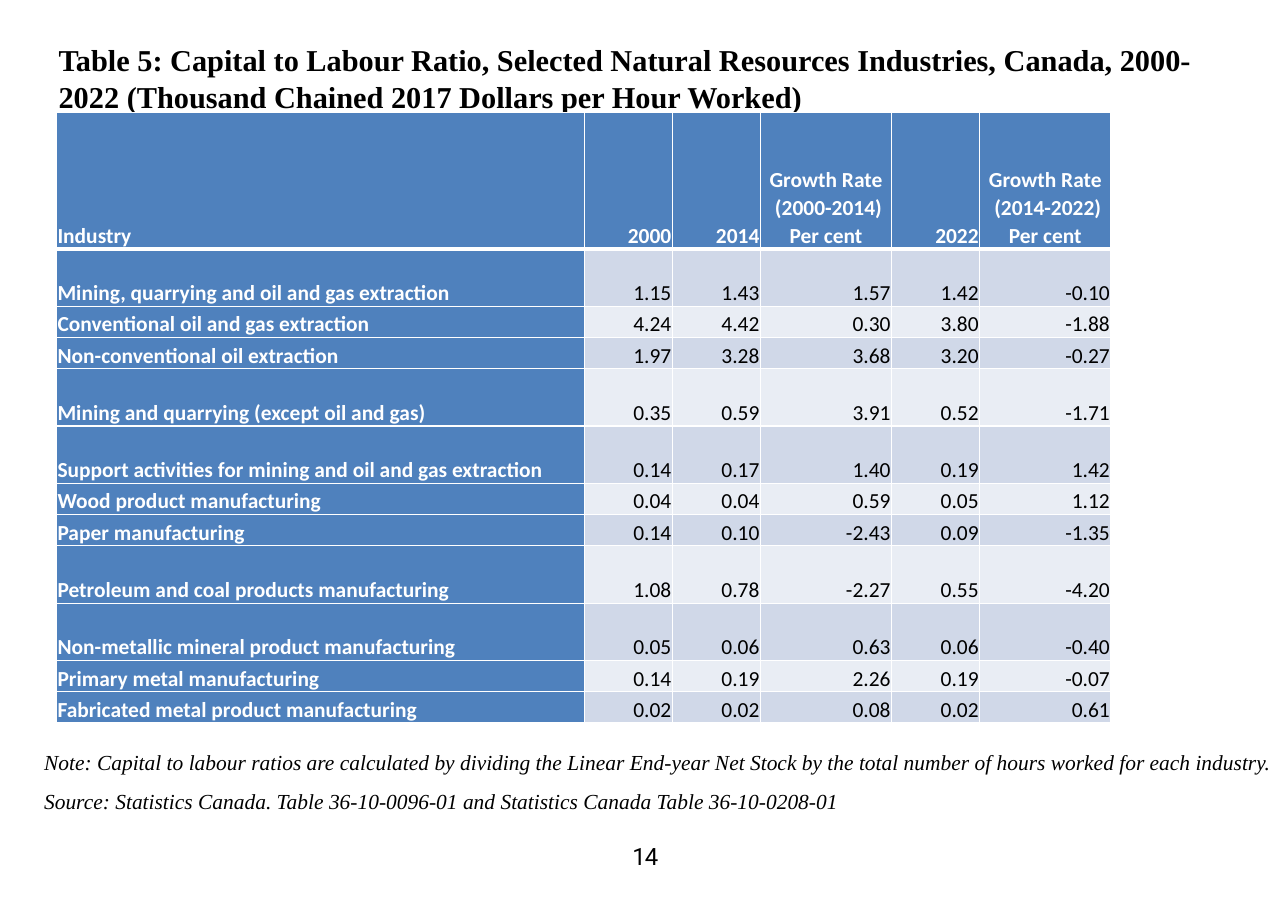
from lxml.etree import SubElement
from pptx import Presentation
from pptx.dml.color import RGBColor
from pptx.enum.text import MSO_ANCHOR as Anchor, MSO_AUTO_SIZE as AutoSize, PP_ALIGN as Align
from pptx.oxml.ns import qn
from pptx.util import Pt

BLACK, WHITE, HEADER_BLUE = "000000", "FFFFFF", "4F81BD"
BANDS = ("D0D8E8", "E9EDF4")

TITLE = ("Table 5: Capital to Labour Ratio, Selected Natural Resources Industries, Canada, "
         "2000-2022 (Thousand Chained 2017 Dollars per Hour Worked)")
NOTES = (
    "Note: Capital to labour ratios are calculated by dividing the Linear End-year Net Stock "
    "by the total number of hours worked for each industry.",
    "Source: Statistics Canada. Table 36-10-0096-01\u00a0and Statistics Canada Table 36-10-0208-01",
)
HEADINGS = ("Industry", "2000", "2014", "Growth Rate\n (2000-2014)\nPer cent",
            "2022", "Growth Rate\n (2014-2022)\nPer cent")
INDUSTRIES = (
    ("Mining, quarrying and oil and gas extraction", "1.15", "1.43", "1.57", "1.42", "-0.10"),
    ("Conventional oil and gas extraction", "4.24", "4.42", "0.30", "3.80", "-1.88"),
    ("Non-conventional oil extraction", "1.97", "3.28", "3.68", "3.20", "-0.27"),
    ("Mining and quarrying (except oil and gas)", "0.35", "0.59", "3.91", "0.52", "-1.71"),
    ("Support activities for mining and oil and gas extraction",
     "0.14", "0.17", "1.40", "0.19", "1.42"),
    ("Wood product manufacturing", "0.04", "0.04", "0.59", "0.05", "1.12"),
    ("Paper manufacturing", "0.14", "0.10", "-2.43", "0.09", "-1.35"),
    ("Petroleum and coal products manufacturing", "1.08", "0.78", "-2.27", "0.55", "-4.20"),
    ("Non-metallic mineral product manufacturing", "0.05", "0.06", "0.63", "0.06", "-0.40"),
    ("Primary metal manufacturing", "0.14", "0.19", "2.26", "0.19", "-0.07"),
    ("Fabricated metal product manufacturing", "0.02", "0.02", "0.08", "0.02", "0.61"),
)
COLUMN_WIDTHS = (344.9, 57.6, 57.6, 85.7, 57.6, 85.7)
HEADER_HEIGHT, ONE_LINE, TWO_LINES = 89.2, 20.35, 37.55
LONGEST_ONE_LINE_LABEL = 40


def rgb(color):
    return RGBColor.from_string(color)


def add_run(paragraph, text, size, face, color=BLACK, bold=False, italic=False):
    run = paragraph.add_run()
    run.text = text
    font = run.font
    font.size, font.name, font.bold, font.italic = Pt(size), face, bold, italic
    font.color.rgb = rgb(color)
    return run


def add_frame(slide, box, top_inset=0):
    """Add a wrapping text box with no side insets and return its text frame."""
    frame = slide.shapes.add_textbox(*map(Pt, box)).text_frame
    frame.word_wrap = True
    frame.auto_size = AutoSize.SHAPE_TO_FIT_TEXT
    frame.margin_left = frame.margin_right = frame.margin_bottom = 0
    frame.margin_top = Pt(top_inset)
    return frame


def indent(paragraph, points):
    paragraph._p.get_or_add_pPr().set("marL", str(Pt(points)))


def add_title(slide, box):
    heading = add_frame(slide, box, 0.7).paragraphs[0]
    indent(heading, 1.4)
    heading.line_spacing = 1.03
    heading.space_before = Pt(0.7)
    add_run(heading, TITLE, 19.8, "Times New Roman", bold=True)


def add_notes(slide, box):
    frame = add_frame(slide, box, 1.4)
    for index, note in enumerate(NOTES):
        line = frame.add_paragraph() if index else frame.paragraphs[0]
        line.line_spacing, line.space_after = 1.07, Pt(8)
        add_run(line, note, 14, "Times New Roman", italic=True)


def add_page_number(slide, box):
    number = add_frame(slide, box).paragraphs[0]
    indent(number, 5.8)
    number.space_before = Pt(0.5)
    run = add_run(number, "14", 15.6, "Roboto")
    run._r.get_or_add_rPr().set("spc", "-70")


def add_borders(cell, top, bottom):
    """Draw white cell borders; top and bottom widths are in points."""
    properties = cell._tc.get_or_add_tcPr()
    for side, width in (("L", 1), ("R", 1), ("T", top), ("B", bottom)):
        line = SubElement(properties, qn(f"a:ln{side}"), w=str(Pt(width)))
        fill = SubElement(line, qn("a:solidFill"))
        SubElement(fill, qn("a:srgbClr"), val=WHITE)


def fill_cell(cell, text, row, column):
    is_label = row == 0 or column == 0
    add_borders(cell, top=3 if row == 1 else 1, bottom=3 if row == 0 else 1)
    cell.fill.solid()
    cell.fill.fore_color.rgb = rgb(HEADER_BLUE if is_label else BANDS[(row - 1) % 2])
    cell.vertical_anchor = Anchor.BOTTOM
    cell.margin_left = cell.margin_right = Pt(0.7)
    cell.margin_top = cell.margin_bottom = 0

    paragraph = cell.text_frame.paragraphs[0]
    paragraph.line_spacing, paragraph.space_after = 1.07, Pt(8)
    if "\n" in text:
        paragraph.alignment = Align.CENTER
    else:
        paragraph.alignment = Align.RIGHT if column else Align.LEFT
    for index, line in enumerate(text.split("\n")):
        if index:
            paragraph.add_line_break()
        add_run(paragraph, line, 14, "Calibri", WHITE if is_label else BLACK, bold=is_label)


def add_ratio_table(slide, left, top):
    heights = [HEADER_HEIGHT] + [
        TWO_LINES if len(industry[0]) > LONGEST_ONE_LINE_LABEL else ONE_LINE
        for industry in INDUSTRIES
    ]
    table = slide.shapes.add_table(
        len(heights), len(COLUMN_WIDTHS),
        Pt(left), Pt(top), Pt(sum(COLUMN_WIDTHS)), Pt(sum(heights))).table
    table.first_col = True
    for column, width in zip(table.columns, COLUMN_WIDTHS):
        column.width = Pt(width)
    for row, (height, texts) in enumerate(zip(heights, (HEADINGS, *INDUSTRIES))):
        table.rows[row].height = Pt(height)
        for column, text in enumerate(texts):
            fill_cell(table.cell(row, column), text, row, column)


def main():
    deck = Presentation()
    deck.slide_width, deck.slide_height = Pt(841.7), Pt(594.7)
    slide = deck.slides.add_slide(deck.slide_layouts[6])
    add_title(slide, (36.9, 25.2, 741.6, 49))
    add_notes(slide, (28.8, 486.7, 805, 74.2))
    add_page_number(slide, (407.5, 550.1, 24.5, 18.7))
    add_ratio_table(slide, 36.9, 73.6)
    deck.save("out.pptx")


if __name__ == "__main__":
    main()
